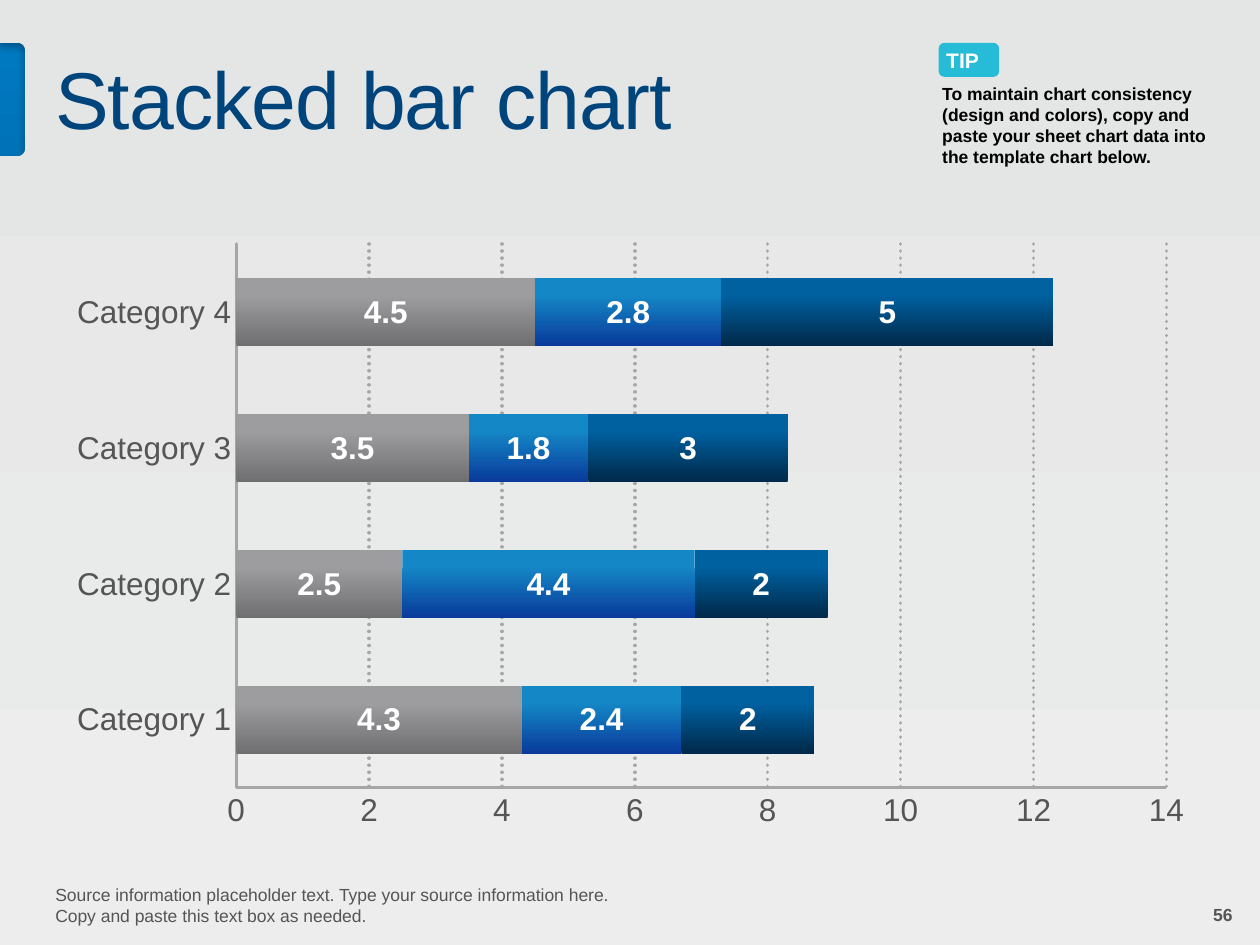
from math import cos, pi, sin

from lxml import etree
from pptx import Presentation
from pptx.chart.data import CategoryChartData
from pptx.dml.color import RGBColor
from pptx.enum.chart import XL_CHART_TYPE as ChartType, XL_LABEL_POSITION as LabelPosition, XL_TICK_MARK as TickMark
from pptx.enum.dml import MSO_LINE as LineStyle
from pptx.enum.shapes import MSO_SHAPE as ShapeType
from pptx.enum.text import MSO_ANCHOR as Anchor, PP_ALIGN as Align
from pptx.oxml.ns import qn
from pptx.util import Inches, Pt

FONT = "Arial"
GRAY, AXIS, NAVY, WHITE = "555457", "A6A6A6", "00447C", "FFFFFF"
WIDTH, HEIGHT = 10, 7.5
TAB = {"top": 0.34, "bottom": 1.24, "right": 0.2, "radius": 0.06}

TITLE = "Stacked bar chart"
TIP = ("To maintain chart consistency (design and colors), copy and paste "
       "your sheet chart data into the template chart below.")
SOURCE = ("Source information placeholder text. Type your source information here. "
          "Copy and paste this text box as needed.")
CATEGORIES = ["Category 1", "Category 2", "Category 3", "Category 4"]
SERIES = [
    ("Series 1", (4.3, 2.5, 3.5, 4.5), [(0, "6F6E70"), (75, "9D9D9F")], 270),
    ("Series 2", (2.4, 4.4, 1.8, 2.8), [(25, "1487C6"), (100, "093A9B")], 90),
    ("Series 3", (2, 2, 3, 5), [(0, "002949"), (75, "0061A1")], 270),
]


def color(value):
    return RGBColor.from_string(value)


def set_gradient(fill, stops, clockwise_angle):
    fill.gradient()
    fill.gradient_angle = 360 - clockwise_angle
    for stop, (percent, value) in zip(fill.gradient_stops, stops):
        stop.position = percent / 100
        stop.color.rgb = color(value)


def set_font(font, size, value, bold=False):
    font.name = FONT
    font.size = Pt(size)
    font.bold = bold
    font.color.rgb = color(value)


def add_text(slide, text, box, size, value, bold=False, anchor=Anchor.TOP,
             align=Align.LEFT, margins=(0.1, 0.05), wrap=True):
    shape = slide.shapes.add_textbox(*map(Inches, box))
    frame = shape.text_frame
    frame.text = text
    frame.word_wrap = wrap
    frame.vertical_anchor = anchor
    frame.margin_left = frame.margin_right = Inches(margins[0])
    frame.margin_top = frame.margin_bottom = Inches(margins[1])
    paragraph = frame.paragraphs[0]
    paragraph.alignment = align
    set_font(paragraph.runs[0].font, size, value, bold)
    return shape


def corner(center_y, start_angle):
    center_x = TAB["right"] - TAB["radius"]
    angles = [start_angle + step * pi / 16 for step in range(9)]
    return [(center_x + TAB["radius"] * cos(a), center_y + TAB["radius"] * sin(a)) for a in angles]


def add_panel(slide):
    points = [(0, TAB["top"]),
              *corner(TAB["top"] + TAB["radius"], -pi / 2),
              *corner(TAB["bottom"] - TAB["radius"], 0),
              (0, TAB["bottom"]), (0, HEIGHT), (WIDTH, HEIGHT), (WIDTH, 0)]
    builder = slide.shapes.build_freeform(0, 0)
    builder.add_line_segments([(Inches(x), Inches(y)) for x, y in points])
    panel = builder.convert_to_shape()
    panel.line.fill.background()
    set_gradient(panel.fill, [(0, "E4E6E5"), (100, "ECEDEC")], 90)
    panel.shadow.inherit = False
    effects = panel.element.spPr.find(qn("a:effectLst"))
    shadow = etree.SubElement(effects, qn("a:outerShdw"), blurRad=str(Pt(4)), dist=str(Pt(3)),
                              dir="5400000", algn="t", rotWithShape="0")
    black = etree.SubElement(shadow, qn("a:srgbClr"), val="000000")
    etree.SubElement(black, qn("a:alpha"), val="30000")


def set_line(line, width):
    line.color.rgb = color(AXIS)
    line.width = Pt(width)


def add_bar_chart(slide):
    data = CategoryChartData()
    data.categories = CATEGORIES
    for name, values, _, _ in SERIES:
        data.add_series(name, values)
    box = map(Inches, (0.43, 1.84, 9.15, 4.83))
    chart = slide.shapes.add_chart(ChartType.BAR_STACKED, *box, data).chart
    chart.has_legend = False
    chart.has_title = False
    set_font(chart.font, 18, GRAY)

    for axis in (chart.category_axis, chart.value_axis):
        axis.major_tick_mark = axis.minor_tick_mark = TickMark.NONE
        set_line(axis.format.line, 1.5)
    value_axis = chart.value_axis
    value_axis.minimum_scale, value_axis.maximum_scale, value_axis.major_unit = 0, 14, 2
    value_axis.has_major_gridlines = True
    grid = value_axis.major_gridlines.format.line
    set_line(grid, 2)
    grid.dash_style = LineStyle.ROUND_DOT
    for outline in value_axis._element.find(qn("c:majorGridlines")).iter(qn("a:ln")):
        outline.set("cap", "rnd")

    plot = chart.plots[0]
    plot.gap_width = plot.overlap = 100
    plot.vary_by_categories = False
    for series, (_, _, stops, angle) in zip(plot.series, SERIES):
        set_gradient(series.format.fill, stops, angle)
        labels = series.data_labels
        labels.show_value = True
        labels.position = LabelPosition.CENTER
        set_font(labels.font, 18, WHITE, True)


def add_tip(slide):
    add_text(slide, TIP, (7.38, 0.61, 2.36, 0.77), 10, "000000", bold=True)
    badge = slide.shapes.add_shape(ShapeType.ROUNDED_RECTANGLE, *map(Inches, (7.45, 0.34, 0.48, 0.27)))
    badge.adjustments[0] = 0.167
    badge.fill.solid()
    badge.fill.fore_color.rgb = color("26BCD7")
    badge.line.fill.background()
    badge.shadow.inherit = False
    add_text(slide, "TIP", (7.45, 0.35, 0.38, 0.26), 12, WHITE, bold=True,
             margins=(0.06, 0.03), wrap=False)


def main():
    presentation = Presentation()
    presentation.slide_width, presentation.slide_height = Inches(WIDTH), Inches(HEIGHT)
    slide = presentation.slides.add_slide(presentation.slide_layouts[6])
    set_gradient(slide.background.fill, [(5, "0079C0"), (85, "00457C")], 90)
    add_panel(slide)
    add_text(slide, "56", (6.76, 7.12, 3.12, 0.27), 10, GRAY, bold=True,
             anchor=Anchor.BOTTOM, align=Align.RIGHT)
    title = add_text(slide, TITLE, (0.34, 0.34, 9, 0.88), 46, NAVY)
    title.text_frame.paragraphs[0].runs[0].font._element.set("spc", "-50")
    add_bar_chart(slide)
    add_tip(slide)
    add_text(slide, SOURCE, (0.34, 6.96, 4.79, 0.44), 10, GRAY, anchor=Anchor.BOTTOM)
    presentation.save("out.pptx")


if __name__ == "__main__":
    main()
